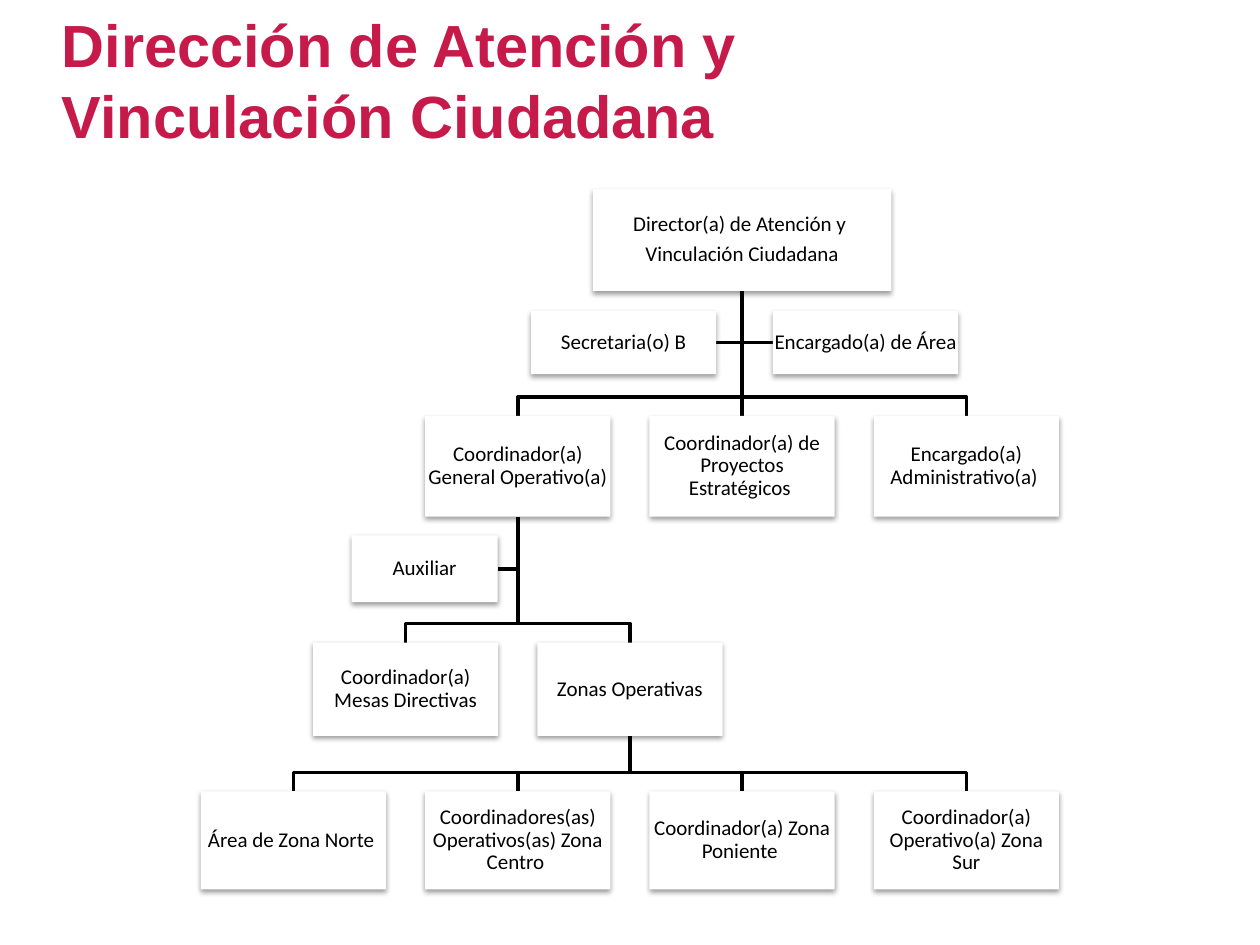
"""Builds the organisation chart slide of the citizen liaison department."""
from dataclasses import dataclass

from lxml import etree
from pptx import Presentation
from pptx.dml.color import RGBColor
from pptx.enum.shapes import MSO_CONNECTOR, MSO_SHAPE
from pptx.enum.text import MSO_ANCHOR, MSO_AUTO_SIZE, PP_ALIGN
from pptx.oxml.ns import qn
from pptx.util import Inches, Pt

RECTANGLE = MSO_SHAPE.RECTANGLE
STRAIGHT = MSO_CONNECTOR.STRAIGHT
MIDDLE = MSO_ANCHOR.MIDDLE
TOP = MSO_ANCHOR.TOP
CENTER = PP_ALIGN.CENTER
LEFT = PP_ALIGN.LEFT
FIXED = MSO_AUTO_SIZE.NONE

COLUMN_PITCH = 1.78
COLUMNS = [2.33 + COLUMN_PITCH * index for index in range(4)]
NORTH, CENTRE, WEST, SOUTH = COLUMNS
BOARDS, ZONES = CENTRE - COLUMN_PITCH / 2, CENTRE + COLUMN_PITCH / 2
BUS_RISE = 0.15


def color(value):
    """Turn a hex string into a colour."""
    return RGBColor.from_string(value)


def write_text(frame, text, font, size, ink, bold=False, align=LEFT, anchor=TOP,
               inset=0.01, line_spacing=1.0, gap=0):
    """Fill a text frame with one paragraph per item of text."""
    frame.word_wrap = True
    frame.auto_size = FIXED
    frame.vertical_anchor = anchor
    frame.margin_left = frame.margin_right = Inches(inset)
    frame.margin_top = frame.margin_bottom = Inches(min(inset, 0.05))
    for index, words in enumerate(text):
        paragraph = frame.add_paragraph() if index else frame.paragraphs[0]
        paragraph.text = words
        paragraph.alignment = align
        paragraph.line_spacing = line_spacing
        paragraph.space_after = Pt(gap)
        for run in paragraph.runs:
            run.font.name = font
            run.font.size = Pt(size)
            run.font.bold = bold
            run.font.color.rgb = color(ink)


@dataclass(frozen=True)
class Post:
    """A box of the chart, placed by its centre column and top edge."""
    center: float
    top: float
    height: float
    text: tuple
    width: float = 1.47

    @property
    def left(self):
        """Left edge."""
        return self.center - self.width / 2

    @property
    def right(self):
        """Right edge."""
        return self.center + self.width / 2

    @property
    def middle(self):
        """Vertical middle."""
        return self.top + self.height / 2

    @property
    def bottom(self):
        """Bottom edge."""
        return self.top + self.height


class Chart:
    """Style of the organisation chart and the slide it is drawn on."""
    accent, ink, paper = "C51A4A", "000000", "FFFFFF"
    title_font, body_font = "Arial", "Calibri"
    line_width = 2

    def __init__(self, slide):
        """Keep the current slide."""
        self.slide = slide

    def title(self, text):
        """Place and format the title."""
        title = self.slide.shapes.title
        title.left, title.top = Inches(0.39), Inches(0.01)
        title.width, title.height = Inches(6.4), Inches(1.25)
        write_text(title.text_frame, [text], self.title_font, 34, self.accent,
                   bold=True, inset=0.1)

    def link(self, *points):
        """Draw a line through the points."""
        spots = [(Inches(x), Inches(y)) for x, y in points]
        if len(spots) == 2:
            line = self.slide.shapes.add_connector(STRAIGHT, *spots[0], *spots[1])
            etree.SubElement(line._element.spPr, qn("a:effectLst"))
        else:
            builder = self.slide.shapes.build_freeform(*spots[0], scale=1.0)
            builder.add_line_segments(spots[1:], close=False)
            line = builder.convert_to_shape()
            line.fill.background()
            line.shadow.inherit = False
        line.line.color.rgb = color(self.ink)
        line.line.width = Pt(self.line_width)

    def link_report(self, boss, report):
        """Join a post to one in the row below."""
        start, end = (boss.center, boss.bottom), (report.center, report.top)
        bus = report.top - BUS_RISE
        if boss.center == report.center:
            self.link(start, end)
        else:
            self.link(start, (boss.center, bus), (report.center, bus), end)

    def link_assistant(self, boss, assistant):
        """Join a post to an assistant at the side of its stem."""
        edge = assistant.right if assistant.center < boss.center else assistant.left
        self.link((boss.center, boss.bottom), (boss.center, assistant.middle),
                  (edge, assistant.middle))

    def post(self, post):
        """Draw a post as a white box with a soft shadow."""
        box = self.slide.shapes.add_shape(
            RECTANGLE, Inches(post.left), Inches(post.top),
            Inches(post.width), Inches(post.height))
        box.fill.solid()
        box.fill.fore_color.rgb = color(self.paper)
        box.line.fill.background()
        box.shadow.inherit = False
        effects = box._element.spPr.find(qn("a:effectLst"))
        shadow = etree.SubElement(
            effects, qn("a:outerShdw"), blurRad=str(Pt(3.1)), dist=str(Pt(1.6)),
            dir="5400000", rotWithShape="0")
        tint = etree.SubElement(shadow, qn("a:srgbClr"), val=self.ink)
        etree.SubElement(tint, qn("a:alpha"), val="38000")
        write_text(box.text_frame, post.text, self.body_font, 12, self.ink,
                   align=CENTER, anchor=MIDDLE, line_spacing=0.9, gap=4.2)


def main():
    """Build and save the slide."""
    deck = Presentation()
    deck.slide_width, deck.slide_height = Inches(10), Inches(7.5)
    chart = Chart(deck.slides.add_slide(deck.slide_layouts[5]))
    chart.title("Dirección de Atención y Vinculación Ciudadana")

    director = Post(WEST, 1.5, 0.81,
                    ("Director(a) de Atención y ", "Vinculación Ciudadana"), 2.37)
    staff = [Post(4.95, 2.47, 0.5, ("Secretaria(o) B",)),
             Post(6.87, 2.47, 0.5, ("Encargado(a) de Área",))]
    coordinators = [
        Post(column, 3.3, 0.8, (text,)) for column, text in (
            (CENTRE, "Coordinador(a) General Operativo(a) "),
            (WEST, "Coordinador(a) de Proyectos Estratégicos "),
            (SOUTH, "Encargado(a)\nAdministrativo(a) "))]
    general = coordinators[0]
    helper = Post(3.37, 4.25, 0.53, ("Auxiliar",), 1.16)
    boards = Post(BOARDS, 5.1, 0.74, ("Coordinador(a) Mesas Directivas",))
    zones = Post(ZONES, 5.1, 0.74, ("Zonas Operativas",))
    areas = [
        Post(column, 6.28, 0.78, (text,)) for column, text in zip(COLUMNS, (
            "Área de Zona Norte ",
            "Coordinadores(as) Operativos(as) Zona Centro ",
            "Coordinador(a) Zona Poniente ",
            "Coordinador(a) Operativo(a) Zona Sur"))]

    for boss, assistants, reports in (
            (director, staff, coordinators),
            (general, [helper], [boards, zones]),
            (zones, [], areas)):
        for assistant in assistants:
            chart.link_assistant(boss, assistant)
        for report in reports:
            chart.link_report(boss, report)
    for post in (director, *staff, *coordinators, helper, boards, zones, *areas):
        chart.post(post)
    deck.save("out.pptx")


if __name__ == "__main__":
    main()
